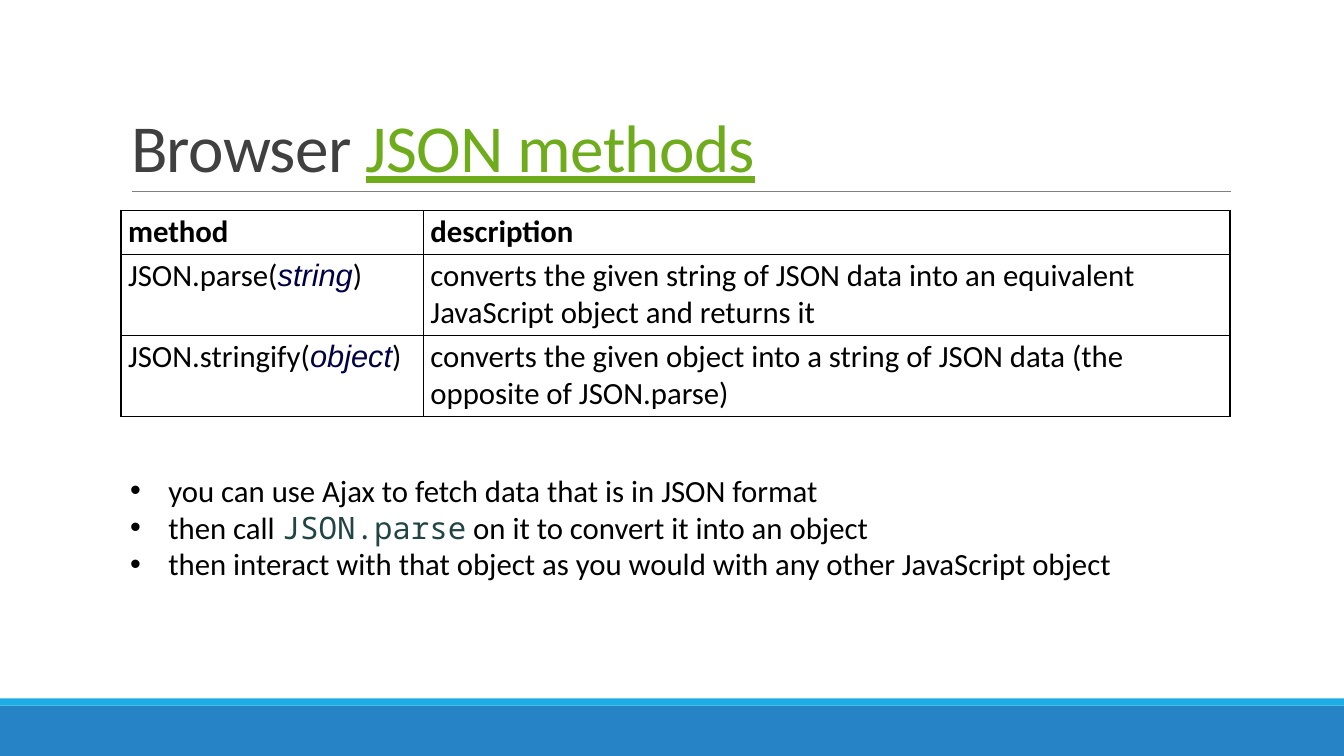
from dataclasses import dataclass

from lxml.etree import SubElement
from pptx import Presentation
from pptx.dml.color import RGBColor
from pptx.enum.shapes import MSO_CONNECTOR as Link, MSO_SHAPE as Form
from pptx.enum.text import MSO_ANCHOR as Anchor, MSO_AUTO_SIZE as Fit, PP_ALIGN as Align
from pptx.oxml.ns import qn
from pptx.util import Emu, Inches, Pt


@dataclass(frozen=True)
class Theme:
    font: str = "Calibri"
    sans: str = "Arial"
    mono: str = "Noto Sans Mono"
    head: int = 48
    body: int = 22
    black: str = "000000"
    white: str = "FFFFFF"
    title: str = "404040"
    green: str = "6EAC1C"
    navy: str = "000044"
    teal: str = "224444"
    rule: str = "808080"
    blue: str = "2683C6"
    sky: str = "1CADE4"
    wide: float = 13.33
    high: float = 7.5
    left: float = 1.2
    col: float = 1.0
    row: float = 0.1


def rgb(code):
    return RGBColor.from_string(code)


class Board:
    """Draws on one slide; columns count from the left margin, rows from the top."""

    def __init__(self, deck, theme):
        self.theme = theme
        deck.slide_width, deck.slide_height = Inches(theme.wide), Inches(theme.high)
        self.slide = deck.slides.add_slide(deck.slide_layouts[5])
        self.shapes = self.slide.shapes

    def place(self, col, row, wide, high):
        """Turn grid units into left, top, width and height."""
        t = self.theme
        return [Inches(n) for n in
                (t.left + col * t.col, row * t.row, wide * t.col, high * t.row)]

    def text(self, para, runs, size, color):
        """Add runs, each a plain string or a pair of string and style."""
        for item in runs:
            words, look = (item, {}) if isinstance(item, str) else item
            run = para.add_run()
            run.text = words
            font = run.font
            font.size = Pt(size)
            font.name = look.get("font", self.theme.font)
            font.color.rgb = rgb(look.get("color", color))
            font.bold = look.get("bold", False)
            font.italic = look.get("italic", False)
            font.underline = look.get("under", False)

    def rect(self, box, color):
        shape = self.shapes.add_shape(Form.RECTANGLE, *self.place(*box))
        shape.shadow.inherit = False
        shape.fill.solid()
        shape.fill.fore_color.rgb = rgb(color)
        shape.line.fill.background()
        return shape

    def band(self, row, high, color):
        """Draw a bar across the whole slide."""
        t = self.theme
        self.rect((-t.left / t.col, row, t.wide / t.col, high), color)

    def rule(self, col, row, wide):
        x, y, w, _ = self.place(col, row, wide, 0)
        line = self.shapes.add_connector(Link.STRAIGHT, x, y, x + w, y)
        line.line.color.rgb = rgb(self.theme.rule)
        line.line.width = Pt(0.5)
        SubElement(line._element.spPr, qn("a:effectLst"))

    def title(self, box, runs):
        shape = self.shapes.title
        shape.left, shape.top, shape.width, shape.height = self.place(*box)
        frame = shape.text_frame
        frame.auto_size = Fit.NONE
        frame.word_wrap = True
        frame.vertical_anchor = Anchor.BOTTOM
        para = frame.paragraphs[0]
        para.alignment = Align.LEFT
        para.line_spacing = 0.85
        self.text(para, runs, self.theme.head, self.theme.title)
        for run in para.runs:
            run._r.get_or_add_rPr().set("spc", "-50")

    def border(self, cell):
        props = cell._tc.get_or_add_tcPr()
        for at, side in enumerate("LRTB"):
            line = SubElement(props, qn(f"a:ln{side}"), w=str(Pt(1)))
            fill = SubElement(line, qn("a:solidFill"))
            SubElement(fill, qn("a:srgbClr"), val=self.theme.black)
            props.insert(at, line)

    def table(self, col, row, cols, rows, data):
        box = self.place(col, row, sum(cols), sum(rows))
        grid = self.shapes.add_table(len(rows), len(cols), *box).table
        grid.first_row = grid.horz_banding = False
        for part, wide in zip(grid.columns, cols):
            part.width = Inches(wide * self.theme.col)
        for part, high, line in zip(grid.rows, rows, data):
            part.height = Inches(high * self.theme.row)
            for cell, runs in zip(part.cells, line):
                cell.fill.background()
                cell.margin_left = cell.margin_right = Inches(0.07)
                cell.margin_top = cell.margin_bottom = Inches(0.03)
                self.border(cell)
                para = cell.text_frame.paragraphs[0]
                self.text(para, runs, self.theme.body, self.theme.black)

    def bullets(self, box, items):
        frame = self.rect(box, self.theme.white).text_frame
        frame.word_wrap = True
        frame.vertical_anchor = Anchor.MIDDLE
        frame.margin_left, frame.margin_bottom = Inches(0.09), Inches(0.13)
        frame.margin_top = frame.margin_right = Emu(0)
        step = Inches(0.38)
        for at, runs in enumerate(items):
            para = frame.add_paragraph() if at else frame.paragraphs[0]
            para.alignment = Align.LEFT
            props = para._p.get_or_add_pPr()
            props.set("marL", str(step))
            props.set("indent", str(-step))
            SubElement(props, qn("a:buFont"), typeface=self.theme.sans)
            SubElement(props, qn("a:buChar"), char="•")
            self.text(para, runs, self.theme.body, self.theme.black)


def main():
    deck = Presentation()
    theme = Theme()
    board = Board(deck, theme)
    bold = {"bold": True}
    arg = {"font": theme.sans, "color": theme.navy, "italic": True}
    code = {"font": theme.mono, "color": theme.teal}
    link = {"color": theme.green, "under": True}

    board.band(70, 5, theme.blue)
    board.band(69.3, 0.7, theme.sky)
    board.rule(0.11, 19, 10.9)
    board.title((0, 3.1, 11, 15.9), ["Browser ", ("JSON methods", link)])
    board.table(0, 20.9, (3, 8), (4.3, 8, 8), [
        ([("method", bold)], [("description", bold)]),
        (["JSON.parse(", ("string", arg), ")"],
         ["converts the given string of JSON data into an equivalent "
          "JavaScript object and returns it"]),
        (["JSON.stringify(", ("object", arg), ")"],
         ["converts the given object into a string of JSON data "
          "(the opposite of JSON.parse)"]),
    ])
    board.bullets((0, 43, 9.92, 19.8), [
        ["you can use Ajax to fetch data that is in JSON format"],
        ["then call ", ("JSON.parse", code), " on it to convert it into an object"],
        ["then interact with that object as you would with any other JavaScript object"],
    ])
    deck.save("out.pptx")


if __name__ == "__main__":
    main()
